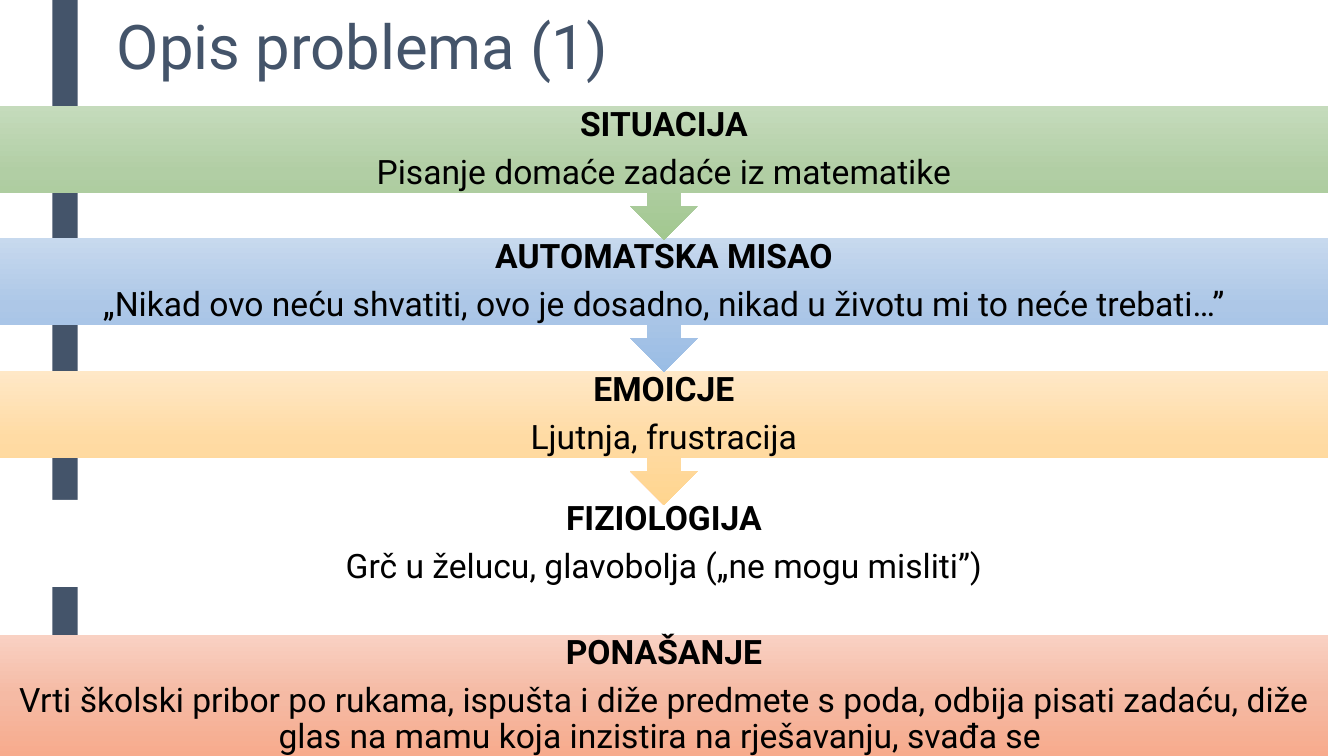
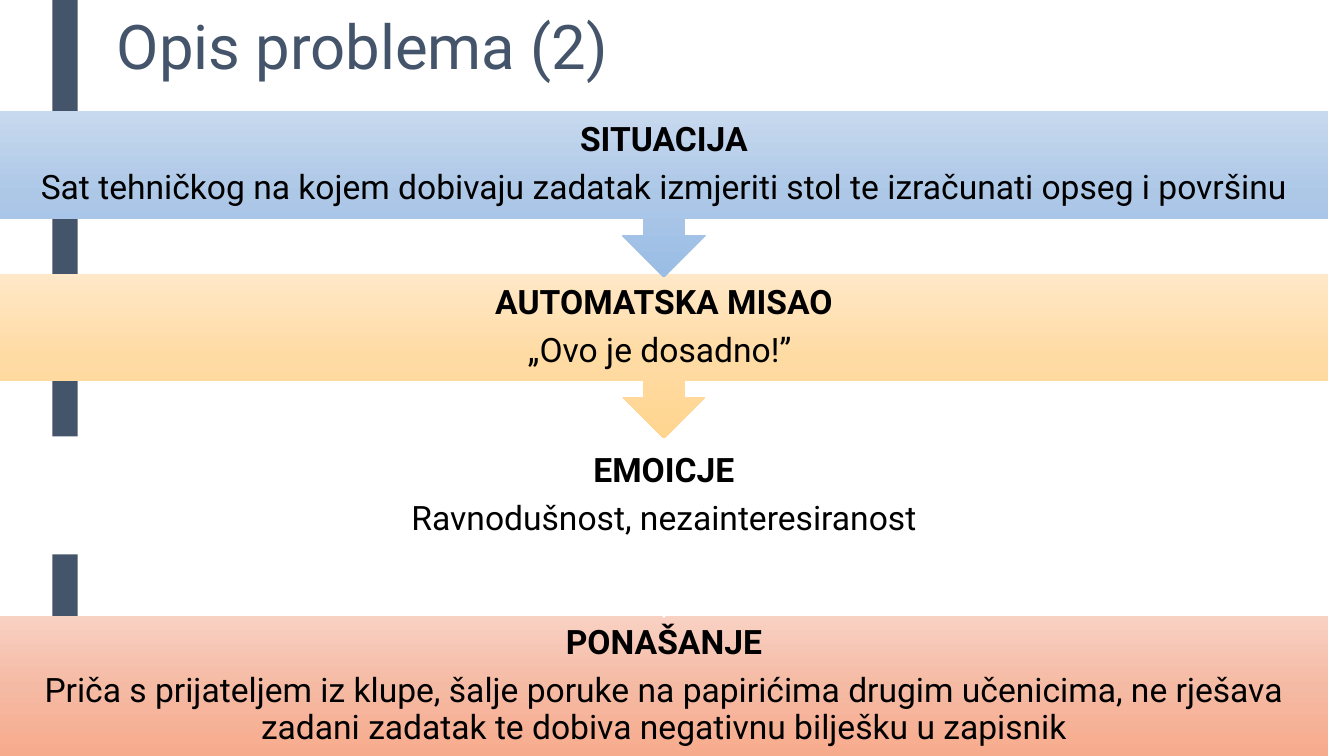
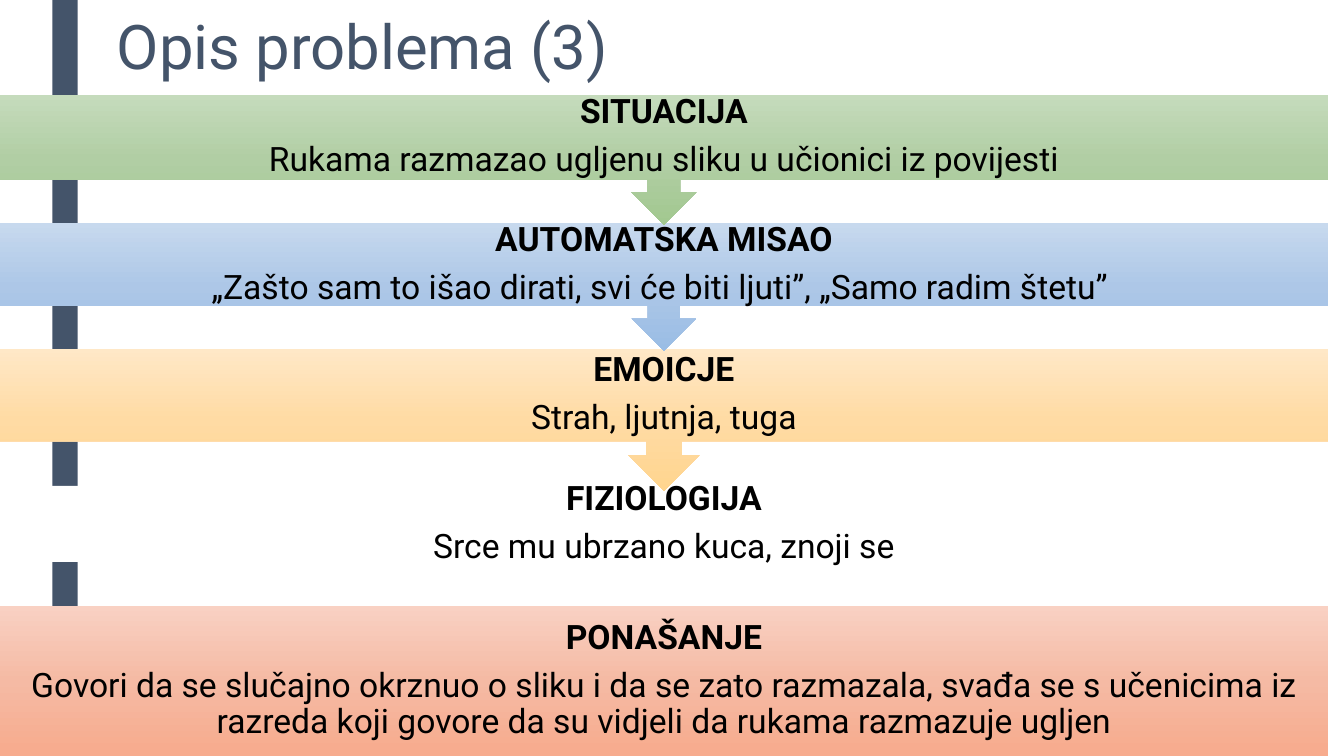
from copy import deepcopy

from pptx import Presentation
from pptx.dml.color import RGBColor
from pptx.enum.shapes import MSO_SHAPE
from pptx.enum.text import MSO_ANCHOR, PP_ALIGN
from pptx.oxml.ns import qn
from pptx.util import Inches, Pt

RECT = MSO_SHAPE.RECTANGLE
CALLOUT = MSO_SHAPE.DOWN_ARROW_CALLOUT
MIDDLE = MSO_ANCHOR.MIDDLE
CENTER = PP_ALIGN.CENTER

SLIDE_W, SLIDE_H = 13.33, 7.5
BAND_W = 13.17
FONT = "Roboto"
COLORS = {
    "slate": "44546A",
    "text": "000000",
    "green": ["C5DBBC", "B1CEA4", "A2C890"],
    "blue": ["C7D9EE", "ADC7E7", "9ABDE5"],
    "yellow": ["FFE8C7", "FFDBA4", "FFD58F"],
    "white": ["FFFFFF"],
    "red": ["F9D1C3", "F5BAA4", "F7AB8D"],
}

SITUATION = "SITUACIJA"
THOUGHT = "AUTOMATSKA MISAO"
EMOTIONS = "EMOICJE"
PHYSIOLOGY = "FIZIOLOGIJA"
BEHAVIOUR = "PONAŠANJE"

SLIDES = [
    ("Opis problema (1)", [
        (1.05, 1.33, "green", SITUATION, "Pisanje domaće zadaće iz matematike"),
        (2.36, 1.33, "blue", THOUGHT,
         "„Nikad ovo neću shvatiti, ovo je dosadno, nikad u životu mi to neće trebati…”"),
        (3.68, 1.33, "yellow", EMOTIONS, "Ljutnja, frustracija"),
        (4.96, 1.33, "white", PHYSIOLOGY, "Grč u želucu, glavobolja („ne mogu misliti”)"),
        (6.3, 1.2, "red", BEHAVIOUR,
         "Vrti školski pribor po rukama, ispušta i diže predmete s poda, odbija pisati "
         "zadaću, diže glas na mamu koja inzistira na rješavanju, svađa se "),
    ]),
    ("Opis problema (2)", [
        (1.1, 1.65, "blue", SITUATION,
         "Sat tehničkog na kojem dobivaju zadatak izmjeriti stol te izračunati opseg i površinu"),
        (2.72, 1.63, "yellow", THOUGHT, "„Ovo je dosadno!” "),
        (4.33, 1.8, "white", EMOTIONS, "Ravnodušnost, nezainteresiranost"),
        (6.11, 1.39, "red", BEHAVIOUR,
         "Priča s prijateljem iz klupe, šalje poruke na papirićima drugim učenicima, "
         "ne rješava zadani zadatak te dobiva negativnu bilješku u zapisnik"),
    ]),
    ("Opis problema (3)", [
        (0.94, 1.29, "green", SITUATION, "Rukama razmazao ugljenu sliku u učionici iz povijesti"),
        (2.21, 1.27, "blue", THOUGHT,
         "„Zašto sam to išao dirati, svi će biti ljuti”, „Samo radim štetu” "),
        (3.46, 1.41, "yellow", EMOTIONS, "Strah, ljutnja, tuga"),
        (4.82, 1.16, "white", PHYSIOLOGY, "Srce mu ubrzano kuca, znoji se"),
        (6.01, 1.49, "red", BEHAVIOUR,
         "Govori da se slučajno okrznuo o sliku i da se zato razmazala, svađa se s učenicima "
         "iz razreda koji govore da su vidjeli da rukama razmazuje ugljen"),
    ]),
]


def rgb(value):
    return RGBColor.from_string(value)


def paint(sp, colors):
    fill = sp.fill
    if len(colors) == 1:
        fill.solid()
        fill.fore_color.rgb = rgb(colors[0])
        return
    fill.gradient()
    fill.gradient_angle = 270
    stop_list = sp.element.find(".//" + qn("a:gsLst"))
    stop_list.append(deepcopy(stop_list[0]))
    for i, (stop, color) in enumerate(zip(fill.gradient_stops, colors)):
        stop.position = i / (len(colors) - 1)
        stop.color.rgb = rgb(color)


def add_block(s, kind, box, colors):
    sp = s.shapes.add_shape(kind, *map(Inches, box))
    sp.shadow.inherit = False
    sp.line.fill.background()
    paint(sp, colors)
    return sp


def style(p, size, color, bold=False):
    p.font.name = FONT
    p.font.size = Pt(size)
    p.font.bold = bold
    p.font.color.rgb = rgb(color)


def add_frame(s, title):
    add_block(s, RECT, (0.52, 0, 0.25, SLIDE_H), [COLORS["slate"]])
    tf = s.shapes.add_textbox(*map(Inches, (1.06, 0.12, 10.5, 1.62))).text_frame
    tf.word_wrap = True
    p = tf.paragraphs[0]
    p.text = title
    p.line_spacing = 0.89
    style(p, 44, COLORS["slate"])


def add_band(s, kind, box, colors, heading, body):
    tf = add_block(s, kind, box, colors).text_frame
    tf.word_wrap = True
    tf.vertical_anchor = MIDDLE
    tf.margin_left = tf.margin_right = tf.margin_top = tf.margin_bottom = Inches(0.19)
    for p, text, bold in ((tf.paragraphs[0], heading, True), (tf.add_paragraph(), body, False)):
        p.text = text
        p.alignment = CENTER
        p.line_spacing = 0.9
        p.space_after = Pt(8.4)
        style(p, 24, COLORS["text"], bold)


def add_flow(s, bands):
    last = bands[-1]
    for band in reversed(bands):
        top, height, color, heading, body = band
        kind = RECT if band is last else CALLOUT
        add_band(s, kind, (0, top, BAND_W, height), COLORS[color], heading, body)


def main():
    prs = Presentation()
    prs.slide_width, prs.slide_height = Inches(SLIDE_W), Inches(SLIDE_H)
    for title, bands in SLIDES:
        s = prs.slides.add_slide(prs.slide_layouts[6])
        add_frame(s, title)
        add_flow(s, bands)
    prs.save("out.pptx")


if __name__ == "__main__":
    main()
